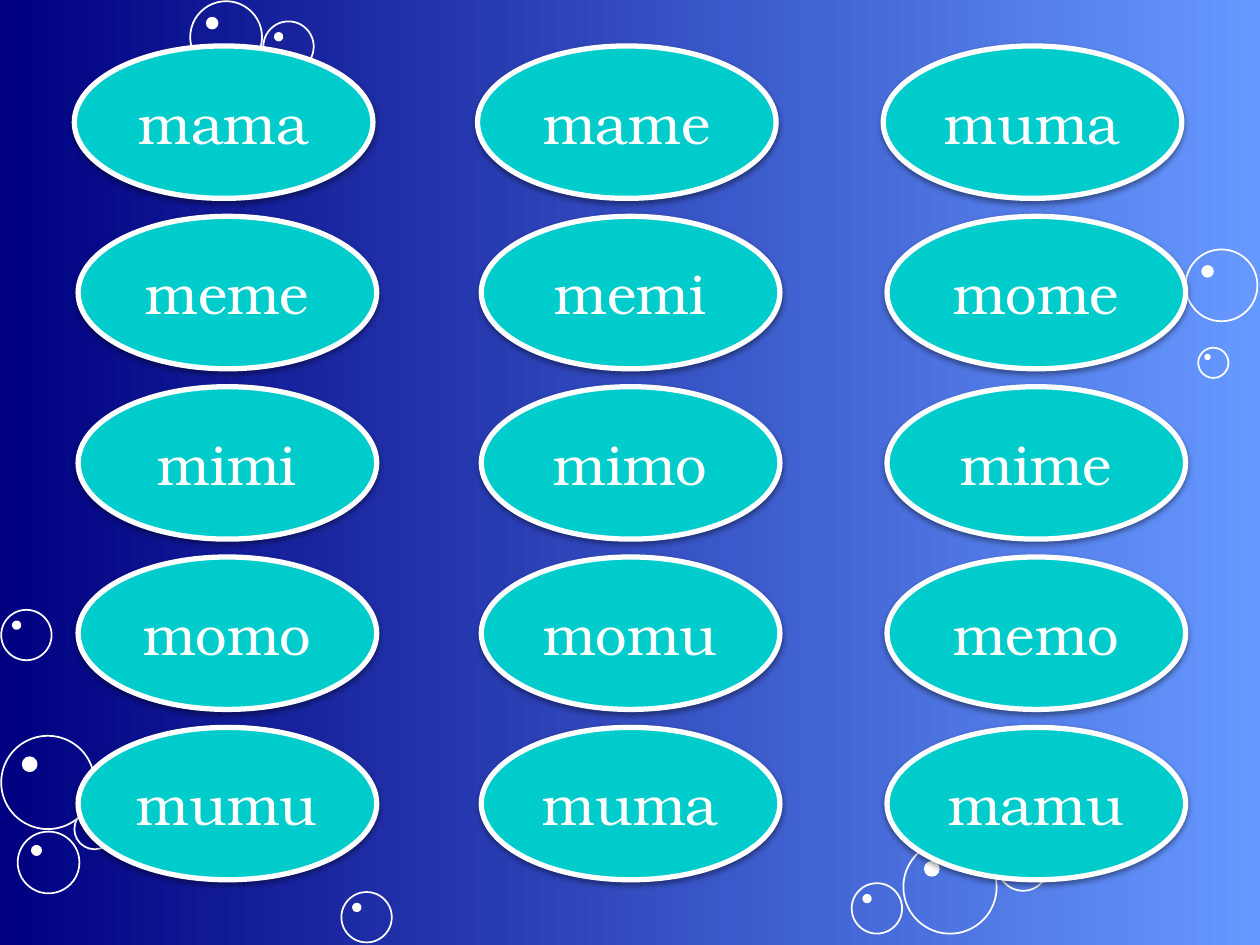
from dataclasses import dataclass

from lxml import etree
from pptx import Presentation
from pptx import util as u
from pptx.dml.color import RGBColor
from pptx.enum import shapes, text
from pptx.oxml import ns

COLUMNS, ROWS = 100, 75

BUBBLES = [
    (0.1, 58.4, 7.4), (5.9, 64.2, 3.2), (1.4, 66, 4.9),
    (27.1, 70.8, 4), (0.1, 48.4, 4),
    (71.7, 66.7, 7.4), (67.6, 70.1, 4), (79.2, 66.7, 4),
    (94.1, 19.8, 5.7), (95.1, 27.6, 2.4),
    (15.1, 0.1, 5.7), (20.9, 1.7, 4),
]
WORD_COLUMNS = [
    (6.2, ["mama", "meme", "mimi", "momo", "mumu"]),
    (38.2, ["mame", "memi", "mimo", "momu", "muma"]),
    (70.4, ["muma", "mome", "mime", "memo", "mamu"]),
]
WORD_WIDTH, WORD_HEIGHT = 23.7, 12.1
FIRST_ROW, ROW_STEP, FIRST_ROW_SHIFT = 3.65, 13.52, -0.3


@dataclass(frozen=True)
class Theme:
    background: tuple = ("000080", "6699FF")
    white: str = "FFFFFF"
    word_fill: str = "00CCCC"
    shadow: str = "000000"
    font: str = "TeX Gyre Bonum"
    word_size: int = 32
    word_line: int = 3
    bubble_line: int = 1


class SlideBuilder:
    def __init__(self, presentation, theme):
        self.theme = theme
        self.column = presentation.slide_width / COLUMNS
        self.row = presentation.slide_height / ROWS
        self.slide = presentation.slides.add_slide(presentation.slide_layouts[6])

    def background(self):
        fill = self.slide.background.fill
        fill.gradient()
        fill.gradient_angle = 0
        for position, (stop, color) in enumerate(zip(fill.gradient_stops, self.theme.background)):
            stop.position = position
            stop.color.rgb = RGBColor.from_string(color)

    def ellipse(self, left, top, width, height, line_width, fill=None):
        shape = self.slide.shapes.add_shape(
            shapes.MSO_SHAPE.OVAL,
            u.Emu(round(left * self.column)), u.Emu(round(top * self.row)),
            u.Emu(round(width * self.column)), u.Emu(round(height * self.row)))
        shape.shadow.inherit = False
        if fill:
            shape.fill.solid()
            shape.fill.fore_color.rgb = RGBColor.from_string(fill)
        else:
            shape.fill.background()
        shape.line.color.rgb = RGBColor.from_string(self.theme.white)
        shape.line.width = u.Pt(line_width)
        return shape

    def bubble(self, left, top, size):
        width = self.theme.bubble_line
        self.ellipse(left, top, size, size, width)
        inset, glint = 0.23 * size, 0.15 * size
        self.ellipse(left + inset, top + inset, glint, glint, width, self.theme.white)

    def shadow(self, shape):
        effects = shape._element.spPr.find(ns.qn("a:effectLst"))
        shadow = etree.SubElement(effects, ns.qn("a:outerShdw"), blurRad="40000",
                                  dist="20000", dir="5400000", rotWithShape="0")
        color = etree.SubElement(shadow, ns.qn("a:srgbClr"), val=self.theme.shadow)
        etree.SubElement(color, ns.qn("a:alpha"), val="38000")

    def word(self, left, top, label):
        shape = self.ellipse(left, top, WORD_WIDTH, WORD_HEIGHT,
                             self.theme.word_line, self.theme.word_fill)
        self.shadow(shape)
        shape.text_frame.vertical_anchor = text.MSO_ANCHOR.MIDDLE
        paragraph = shape.text_frame.paragraphs[0]
        paragraph.alignment = text.PP_ALIGN.CENTER
        run = paragraph.add_run()
        run.text = label
        font_format = {"name": self.theme.font, "size": u.Pt(self.theme.word_size)}
        for attribute, value in font_format.items():
            setattr(run.font, attribute, value)
        run.font.color.rgb = RGBColor.from_string(self.theme.white)


def main():
    presentation = Presentation()
    presentation.slide_width, presentation.slide_height = u.Inches(10), u.Inches(7.5)
    builder = SlideBuilder(presentation, Theme())
    builder.background()
    for bubble in BUBBLES:
        builder.bubble(*bubble)
    for left, words in WORD_COLUMNS:
        for index, label in enumerate(words):
            shift = 0 if index else FIRST_ROW_SHIFT
            builder.word(left + shift, FIRST_ROW + index * ROW_STEP, label)
    presentation.save("out.pptx")


if __name__ == "__main__":
    main()
